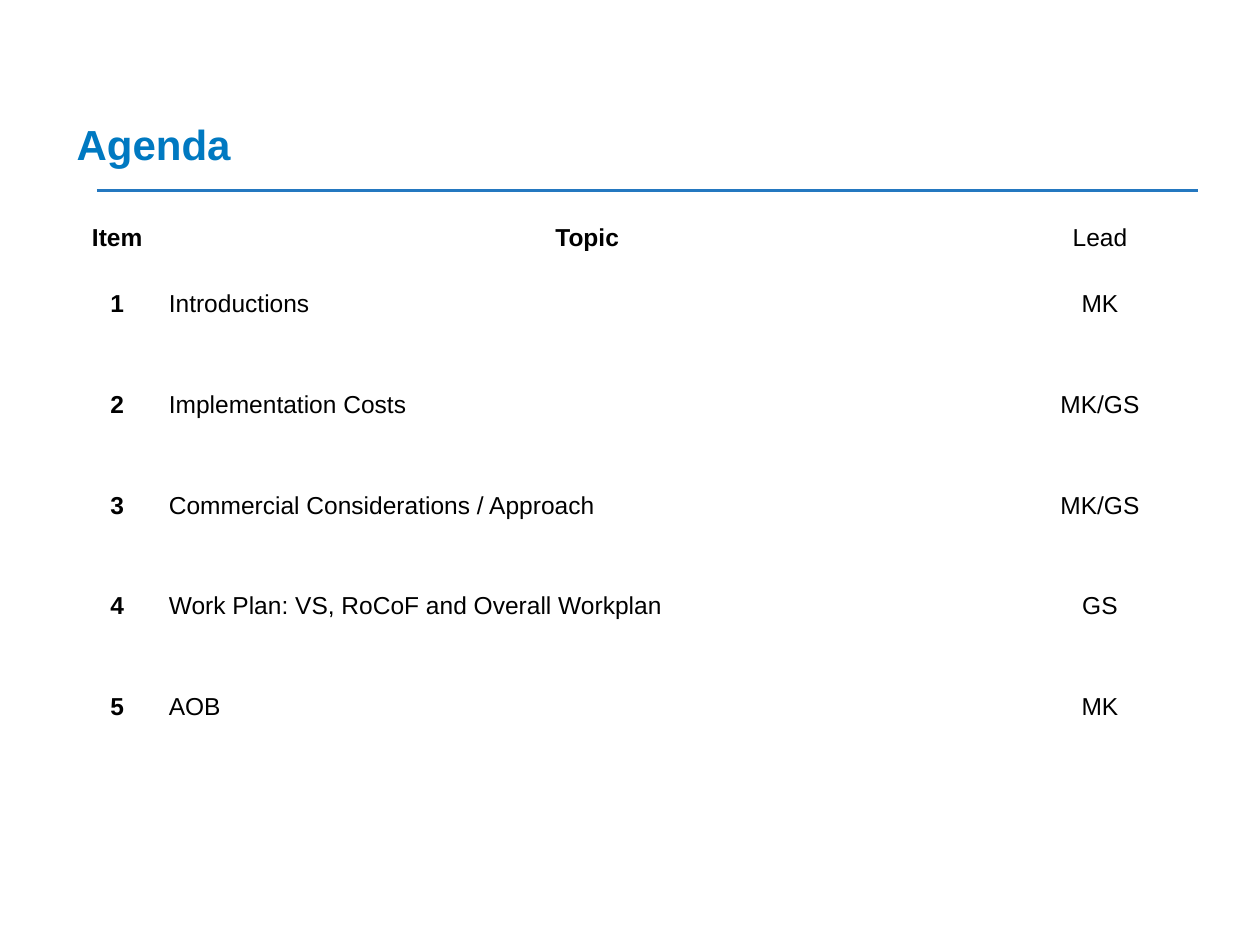
from lxml import etree
from pptx import Presentation
from pptx.dml.color import RGBColor
from pptx.enum.shapes import MSO_CONNECTOR
from pptx.enum.text import MSO_ANCHOR, PP_ALIGN
from pptx.oxml.ns import qn
from pptx.util import Inches, Pt

TITLE_BLUE = RGBColor(0x00, 0x79, 0xC1)
RULE_BLUE = RGBColor(0x24, 0x78, 0xC0)
BLACK = RGBColor(0, 0, 0)
WHITE = RGBColor(255, 255, 255)
FONT = "Arial"
LEFT, CENTER = PP_ALIGN.LEFT, PP_ALIGN.CENTER
TOP, MIDDLE, BOTTOM = MSO_ANCHOR.TOP, MSO_ANCHOR.MIDDLE, MSO_ANCHOR.BOTTOM
STRAIGHT = MSO_CONNECTOR.STRAIGHT

HEADINGS = ("Item", "Topic", "Lead")
AGENDA = [
    ("Introductions", "MK"),
    ("Implementation Costs", "MK/GS"),
    ("Commercial Considerations / Approach", "MK/GS"),
    ("Work Plan: VS, RoCoF and Overall Workplan", "GS"),
    ("AOB", "MK"),
]
COLUMN_WIDTHS = (0.68, 6.78, 1.36)
HEADER_HEIGHT = 0.22


def add_text(frame, text, size, color, bold, align=LEFT):
    paragraph = frame.paragraphs[0]
    paragraph.alignment = align
    run = paragraph.add_run()
    run.text = text
    run.font.name = FONT
    run.font.size = Pt(size)
    run.font.bold = bold
    run.font.color.rgb = color


def add_heading(slide, left, top, width, height):
    """Title with the blue rule below it."""
    title = slide.shapes.add_textbox(
        Inches(left), Inches(top), Inches(width), Inches(height))
    frame = title.text_frame
    frame.word_wrap = True
    frame.vertical_anchor = BOTTOM
    add_text(frame, "Agenda", 24, TITLE_BLUE, True)

    rule_y = Inches(top + height + 0.12)
    rule = slide.shapes.add_connector(
        STRAIGHT, Inches(left + 0.26), rule_y, Inches(left + width), rule_y)
    rule.line.color.rgb = RULE_BLUE
    rule.line.width = Pt(1.5)
    etree.SubElement(rule._element.spPr, qn("a:effectLst"))


def set_borders(cell, top_width, bottom_width):
    properties = cell._tc.get_or_add_tcPr()
    widths = {"lnL": 1, "lnR": 1, "lnT": top_width, "lnB": bottom_width}
    for side, width in widths.items():
        border = etree.SubElement(properties, qn(f"a:{side}"), w=str(Pt(width)))
        fill = etree.SubElement(border, qn("a:solidFill"))
        etree.SubElement(fill, qn("a:srgbClr"), val=str(WHITE))


def add_agenda(slide, left, top, width, height):
    """Agenda table: a thin header and equal rows for the items."""
    rows = [HEADINGS] + [(str(number), topic, lead)
                         for number, (topic, lead) in enumerate(AGENDA, 1)]
    table = slide.shapes.add_table(
        len(rows), len(HEADINGS),
        Inches(left), Inches(top), Inches(width), Inches(height)).table
    table.horz_banding = False
    table.first_row = False
    for column, share in zip(table.columns, COLUMN_WIDTHS):
        column.width = Inches(width * share / sum(COLUMN_WIDTHS))

    item_height = (height - HEADER_HEIGHT) / len(AGENDA)
    for r, texts in enumerate(rows):
        header = r == 0
        table.rows[r].height = Inches(HEADER_HEIGHT if header else item_height)
        for c, text in enumerate(texts):
            cell = table.cell(r, c)
            cell.margin_left = cell.margin_right = Inches(0.07)
            cell.margin_top = cell.margin_bottom = 0
            cell.vertical_anchor = TOP if header else MIDDLE
            # Borders come before the fill in the cell properties
            set_borders(cell, 3 if r in (1, len(AGENDA)) else 1,
                        3 if r in (0, len(AGENDA) - 1) else 1)
            cell.fill.solid()
            cell.fill.fore_color.rgb = WHITE
            bold = c == 0 or (header and c == 1)
            align = LEFT if c == 1 and not header else CENTER
            add_text(cell.text_frame, text, 14, BLACK, bold, align)


def main():
    presentation = Presentation()
    presentation.slide_width = Inches(10)
    presentation.slide_height = Inches(7.5)
    slide = presentation.slides.add_slide(presentation.slide_layouts[6])
    add_heading(slide, 0.51, 0.89, 9, 0.5)
    add_agenda(slide, 0.59, 1.78, 8.82, 4.22)
    presentation.save("out.pptx")


if __name__ == "__main__":
    main()
